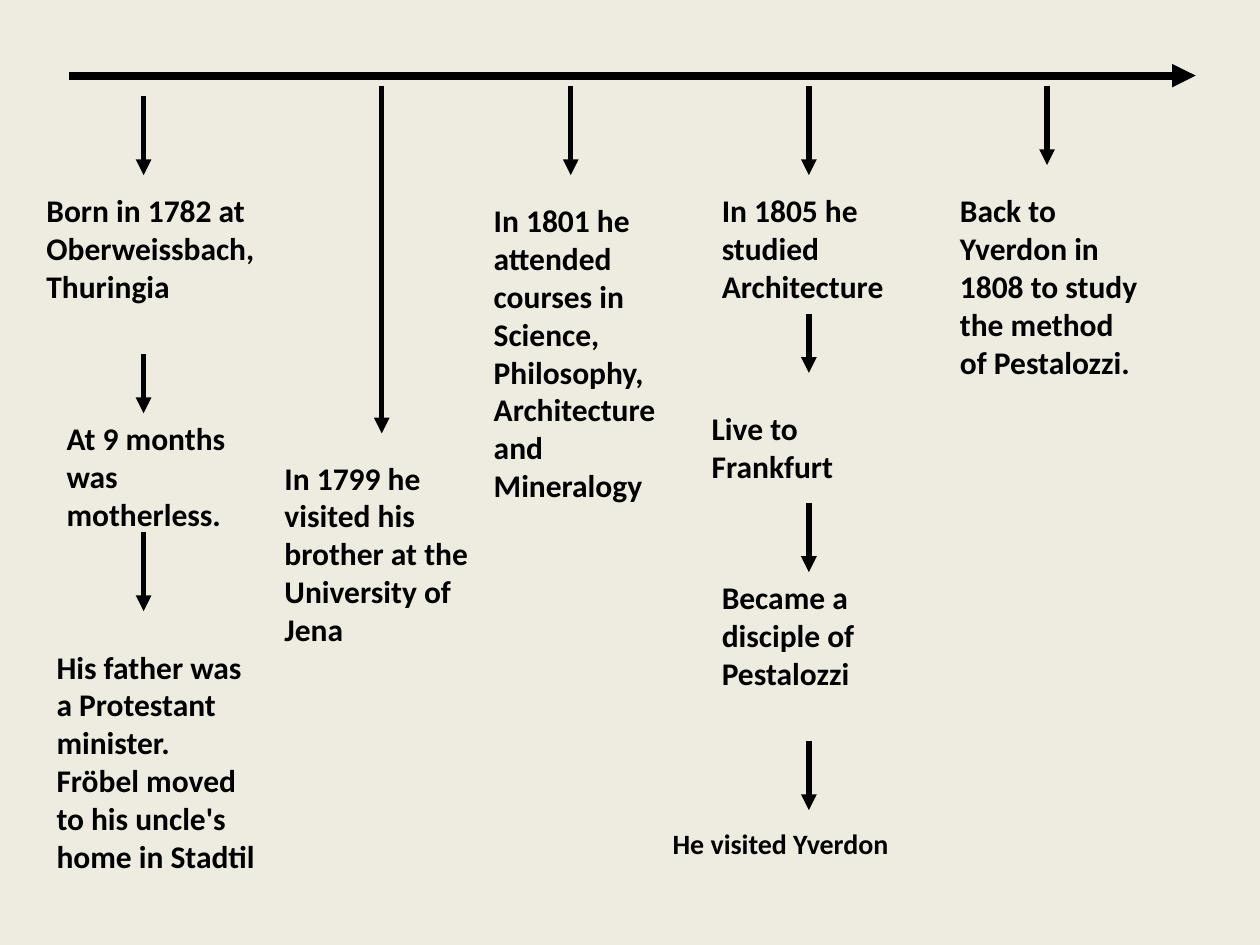
from lxml import etree
from pptx import Presentation
from pptx.dml.color import RGBColor
from pptx.enum import shapes, text
from pptx.oxml.ns import qn
from pptx.util import Inches, Pt

BLACK = RGBColor(0x00, 0x00, 0x00)
CREAM = RGBColor(0xEE, 0xEC, 0xE1)

deck = Presentation()
deck.slide_width, deck.slide_height = Inches(10), Inches(7.5)
page = deck.slides.add_slide(deck.slide_layouts[6])
page.background.fill.solid()
page.background.fill.fore_color.rgb = CREAM


def add_arrow(x1, y1, x2, y2, width=3):
    arrow = page.shapes.add_connector(
        shapes.MSO_CONNECTOR.STRAIGHT, Inches(x1), Inches(y1), Inches(x2), Inches(y2))
    arrow.line.color.rgb = BLACK
    arrow.line.width = Pt(width)
    etree.SubElement(arrow.line._get_or_add_ln(), qn("a:tailEnd"), type="triangle")
    etree.SubElement(arrow._element.spPr, qn("a:effectLst"))


def add_event(left, top, width, height, wording, size=18):
    box = page.shapes.add_textbox(Inches(left), Inches(top), Inches(width), Inches(height))
    frame = box.text_frame
    frame.word_wrap = True
    frame.auto_size = text.MSO_AUTO_SIZE.SHAPE_TO_FIT_TEXT
    para = frame.paragraphs[0]
    para.text = wording
    for span in para.runs:
        span.font.name = "Calibri"
        span.font.size = Pt(size)
        span.font.bold = True
        span.font.color.rgb = BLACK


# Time axis
add_arrow(0.55, 0.6, 9.49, 0.6, width=4.5)

# One column per date: centre of its arrows, then the start and end of each
columns = [
    (1.14, [(0.76, 1.39), (2.81, 3.28), (4.22, 4.85)]),
    (3.03, [(0.68, 3.44)]),
    (4.53, [(0.68, 1.39)]),
    (6.42, [(0.68, 1.39), (2.49, 2.96), (3.99, 4.54), (5.88, 6.43)]),
    (8.31, [(0.68, 1.31)]),
]
for x, spans in columns:
    for start, end in spans:
        add_arrow(x, start, x, end)

events = [
    (0.27, 1.47, 2.05, 0.8, "Born in 1782 at Oberweissbach, Thuringia"),
    (0.43, 3.28, 1.5, 0.8, "At 9 months was motherless."),
    (0.35, 5.09, 1.81, 1.5, "His father was a Protestant minister.\n"
                            "Fröbel moved to his uncle's home in Stadtil"),
    (2.16, 3.59, 1.73, 0.8, "In 1799 he visited his brother at the University of Jena"),
    (3.82, 1.55, 1.65, 1.5, "In 1801 he attended courses in Science, Philosophy, "
                            "Architecture and Mineralogy"),
    (5.63, 1.47, 1.65, 0.8, "In 1805 he studied Architecture"),
    (5.55, 3.2, 1.81, 0.33, "Live to Frankfurt"),
    (5.63, 4.54, 1.65, 0.8, "Became a disciple of Pestalozzi"),
    (7.52, 1.47, 1.65, 1.6, "Back to Yverdon in 1808 to study the method of Pestalozzi."),
]
for event in events:
    add_event(*event)
add_event(5.24, 6.51, 2.6, 0.37, "He visited Yverdon", size=16)

deck.save("out.pptx")
